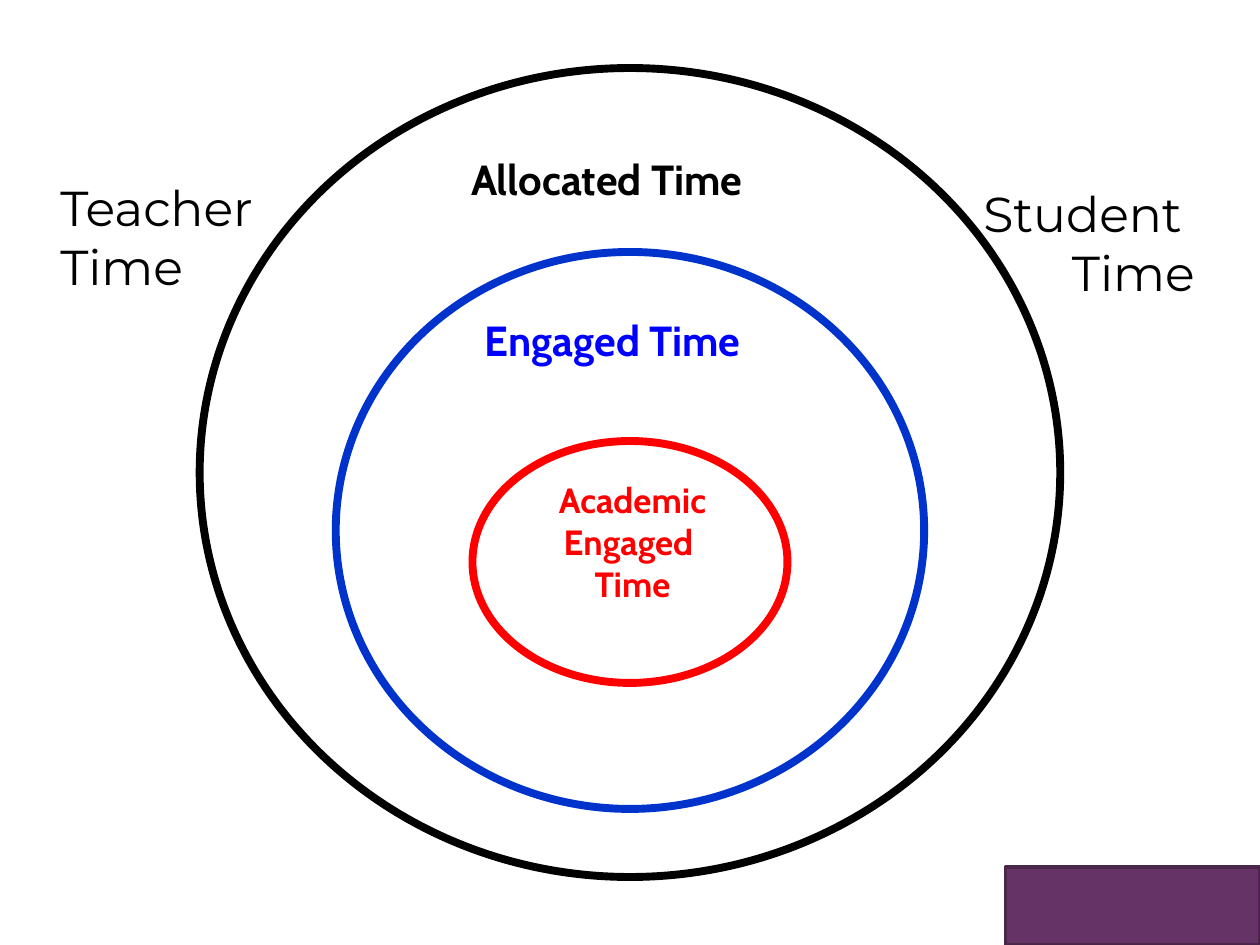
from dataclasses import dataclass

from pptx import Presentation
from pptx.dml.color import RGBColor
from pptx.enum.shapes import MSO_SHAPE
from pptx.enum.text import MSO_AUTO_SIZE, PP_ALIGN
from pptx.util import Inches, Pt

OVAL, RECTANGLE = MSO_SHAPE.OVAL, MSO_SHAPE.RECTANGLE
LEFT, CENTER, RIGHT = PP_ALIGN.LEFT, PP_ALIGN.CENTER, PP_ALIGN.RIGHT
FIT_SHAPE = MSO_AUTO_SIZE.SHAPE_TO_FIT_TEXT
SLIDE_W, SLIDE_H = 10, 7.5


@dataclass(frozen=True)
class Theme:
    black: str = "000000"
    red: str = "FF0000"
    ring_blue: str = "0033CC"
    text_blue: str = "0000FF"
    purple: str = "663366"
    dark_purple: str = "4B264B"
    ring_font: str = "Cabin"
    side_font: str = "Montserrat"
    inner_size: int = 20
    ring_size: int = 24
    side_size: int = 28
    ring_line: float = 4.5
    block_line: float = 2


@dataclass(frozen=True)
class Box:
    left: float
    top: float
    width: float
    height: float

    def lengths(self):
        return [Inches(v) for v in (self.left, self.top, self.width, self.height)]


@dataclass(frozen=True)
class Ring:
    top: float
    width: float
    height: float
    color: str
    label: str
    label_box: Box
    label_color: str
    label_size: int
    align: PP_ALIGN = LEFT


THEME = Theme()
RINGS = [
    Ring(3.5, 2.5, 1.92, THEME.red, "Academic\nEngaged \nTime",
         Box(4.23, 3.75, 1.58, 1.11), THEME.red, THEME.inner_size, CENTER),
    Ring(2, 4.67, 4.42, THEME.ring_blue, "Engaged Time",
         Box(3.75, 2.45, 2.59, 0.51), THEME.text_blue, THEME.ring_size),
    Ring(0.54, 6.83, 6.42, THEME.black, "Allocated Time",
         Box(3.64, 1.17, 2.7, 0.51), THEME.black, THEME.ring_size),
]


def add_outlined(s, kind, box: Box, line: str, width: float, fill: str | None = None):
    sp = s.shapes.add_shape(kind, *box.lengths())
    sp.shadow.inherit = False
    if fill:
        sp.fill.solid()
        sp.fill.fore_color.rgb = RGBColor.from_string(fill)
    else:
        sp.fill.background()
    sp.line.color.rgb = RGBColor.from_string(line)
    sp.line.width = Pt(width)


def add_text(s, text: str, box: Box, *, font: str, size: int, color: str,
             bold: bool = False, align: PP_ALIGN = LEFT):
    """Add a text box with one paragraph for each line of text."""
    tf = s.shapes.add_textbox(*box.lengths()).text_frame
    tf.word_wrap = True
    tf.auto_size = FIT_SHAPE
    tf.text = text
    for p in tf.paragraphs:
        p.alignment = align
        f = p.runs[0].font
        f.name, f.size, f.bold = font, Pt(size), bold
        f.color.rgb = RGBColor.from_string(color)


def add_ring(s, ring: Ring):
    """Draw a ring centred across the slide, with its label."""
    box = Box((SLIDE_W - ring.width) / 2, ring.top, ring.width, ring.height)
    add_outlined(s, OVAL, box, ring.color, THEME.ring_line)
    add_text(s, ring.label, ring.label_box, font=THEME.ring_font, size=ring.label_size,
             color=ring.label_color, bold=True, align=ring.align)


def main():
    prs = Presentation()
    prs.slide_width, prs.slide_height = Inches(SLIDE_W), Inches(SLIDE_H)
    s = prs.slides.add_slide(prs.slide_layouts[6])
    for ring in RINGS:
        add_ring(s, ring)
    side = dict(font=THEME.side_font, size=THEME.side_size, color=THEME.black)
    add_text(s, "Teacher\nTime", Box(0.38, 1.36, 2.42, 1.04), **side)
    add_text(s, "Student \nTime", Box(6.83, 1.41, 2.75, 1.04), align=RIGHT, **side)
    add_outlined(s, RECTANGLE, Box(7.98, 6.88, 2.02, 0.62), THEME.dark_purple,
                 THEME.block_line, fill=THEME.purple)
    prs.save("out.pptx")


if __name__ == "__main__":
    main()
